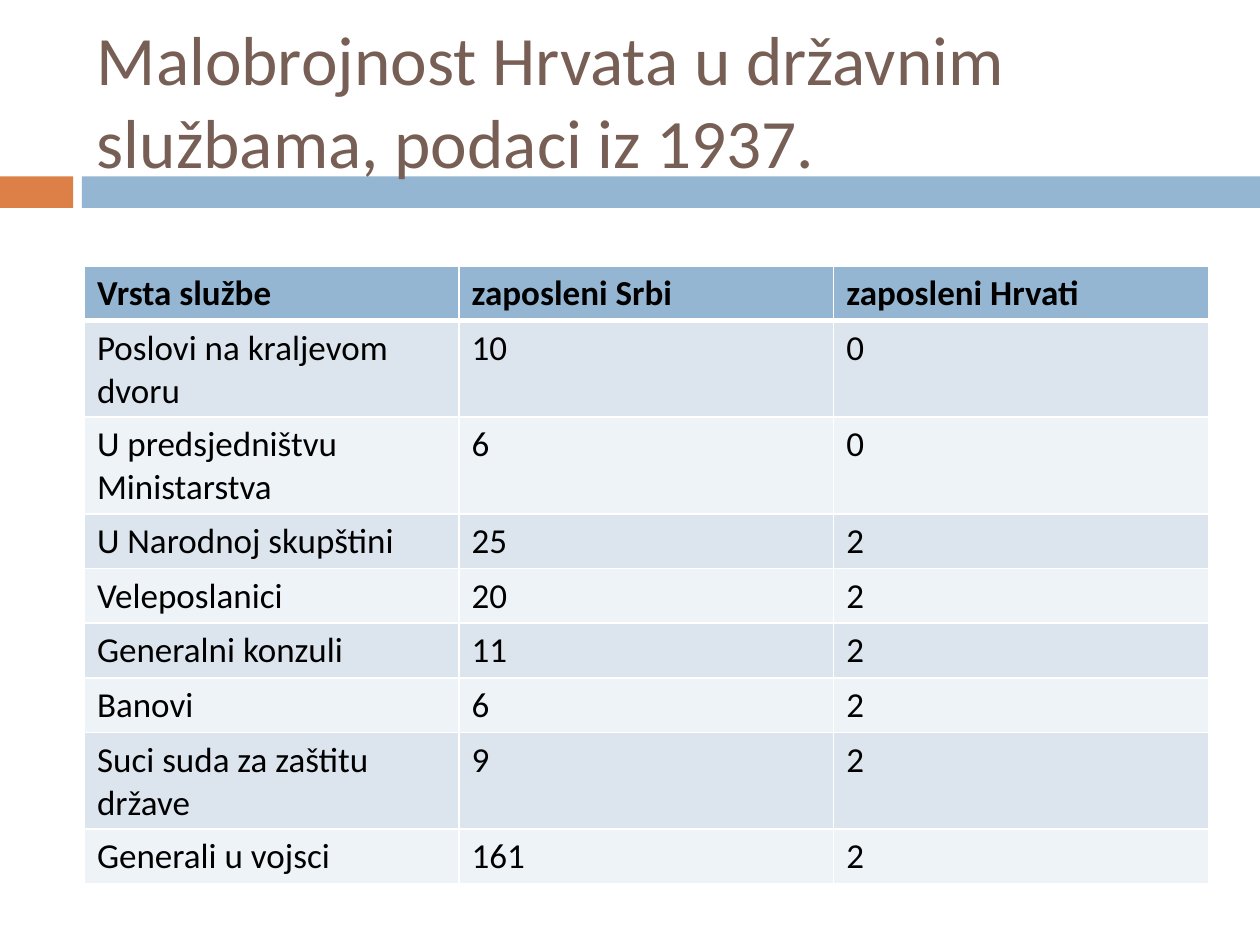
from lxml.etree import SubElement
from pptx import Presentation
from pptx.dml.color import RGBColor
from pptx.enum.shapes import MSO_SHAPE as Shape
from pptx.enum.text import MSO_ANCHOR as Anchor
from pptx.oxml.ns import qn
from pptx.util import Inches, Pt

COLORS = {
    "title": "775F55", "accent": "DD8047", "band": "94B6D2",
    "odd_row": "DCE5EE", "even_row": "EEF3F7",
    "text": "000000", "border": "FFFFFF",
}
FONT = "Calibri"
HEADINGS = ("Vrsta službe", "zaposleni Srbi", "zaposleni Hrvati")
SERVICES = [
    ("Poslovi na kraljevom dvoru", 10, 0),
    ("U predsjedništvu Ministarstva", 6, 0),
    ("U Narodnoj skupštini", 25, 2),
    ("Veleposlanici", 20, 2),
    ("Generalni konzuli", 11, 2),
    ("Banovi", 6, 2),
    ("Suci suda za zaštitu države", 9, 2),
    ("Generali u vojsci", 161, 2),
]


def color(name):
    return RGBColor.from_string(COLORS[name])


def write(frame, text, size=20, ink="text", bold=False):
    span = frame.paragraphs[0].add_run()
    span.text = text
    span.font.name = FONT
    span.font.size = Pt(size)
    span.font.bold = bold
    span.font.color.rgb = color(ink)


def set_borders(cell, **widths):
    """Draw cell borders; widths in points, keyed L, R, T and B."""
    properties = cell._tc.get_or_add_tcPr()
    for side in "LRTB":
        line = SubElement(properties, qn(f"a:ln{side}"),
                          w=str(Pt(widths.get(side, 1))))
        fill = SubElement(line, qn("a:solidFill"))
        SubElement(fill, qn("a:srgbClr"), val=COLORS["border"])


def add_divider(page, left, top, width, height):
    tab, gap = 0.58, 0.07
    start = tab + gap
    for offset, length, name in ((0, tab, "accent"), (start, width - start, "band")):
        bar = page.shapes.add_shape(
            Shape.RECTANGLE, Inches(left + offset), Inches(top),
            Inches(length), Inches(height))
        bar.shadow.inherit = False
        bar.fill.solid()
        bar.fill.fore_color.rgb = color(name)
        bar.line.fill.background()


def add_title(page, text, left, top, width, height):
    box = page.shapes.add_textbox(*map(Inches, (left, top, width, height)))
    frame = box.text_frame
    frame.word_wrap = True
    frame.vertical_anchor = Anchor.MIDDLE
    write(frame, text, size=39.6, ink="title")


def add_service_table(page, left, top, width, row_height):
    rows = [HEADINGS, *SERVICES]
    table = page.shapes.add_table(
        len(rows), len(HEADINGS), Inches(left), Inches(top),
        Inches(width), Inches(row_height * len(rows))).table
    for row_index, row in enumerate(rows):
        is_header = row_index == 0
        fill = "band" if is_header else "odd_row" if row_index % 2 else "even_row"
        # A thicker rule separates the header from the body
        widths = {0: {"B": 3}, 1: {"T": 3}}.get(row_index, {})
        for column_index, value in enumerate(row):
            cell = table.cell(row_index, column_index)
            set_borders(cell, **widths)
            cell.fill.solid()
            cell.fill.fore_color.rgb = color(fill)
            write(cell.text_frame, str(value), bold=is_header)


def main():
    deck = Presentation()
    deck.slide_width, deck.slide_height = Inches(10), Inches(7.5)
    page = deck.slides.add_slide(deck.slide_layouts[6])
    # Divider lies behind the title
    add_divider(page, 0, 1.4, 10, 0.25)
    add_title(page, "Malobrojnost Hrvata u državnim službama, podaci iz 1937.",
              0.67, 0.25, 8.92, 1.08)
    add_service_table(page, 0.67, 2.11, 8.92, 0.4)
    deck.save("out.pptx")


if __name__ == "__main__":
    main()
